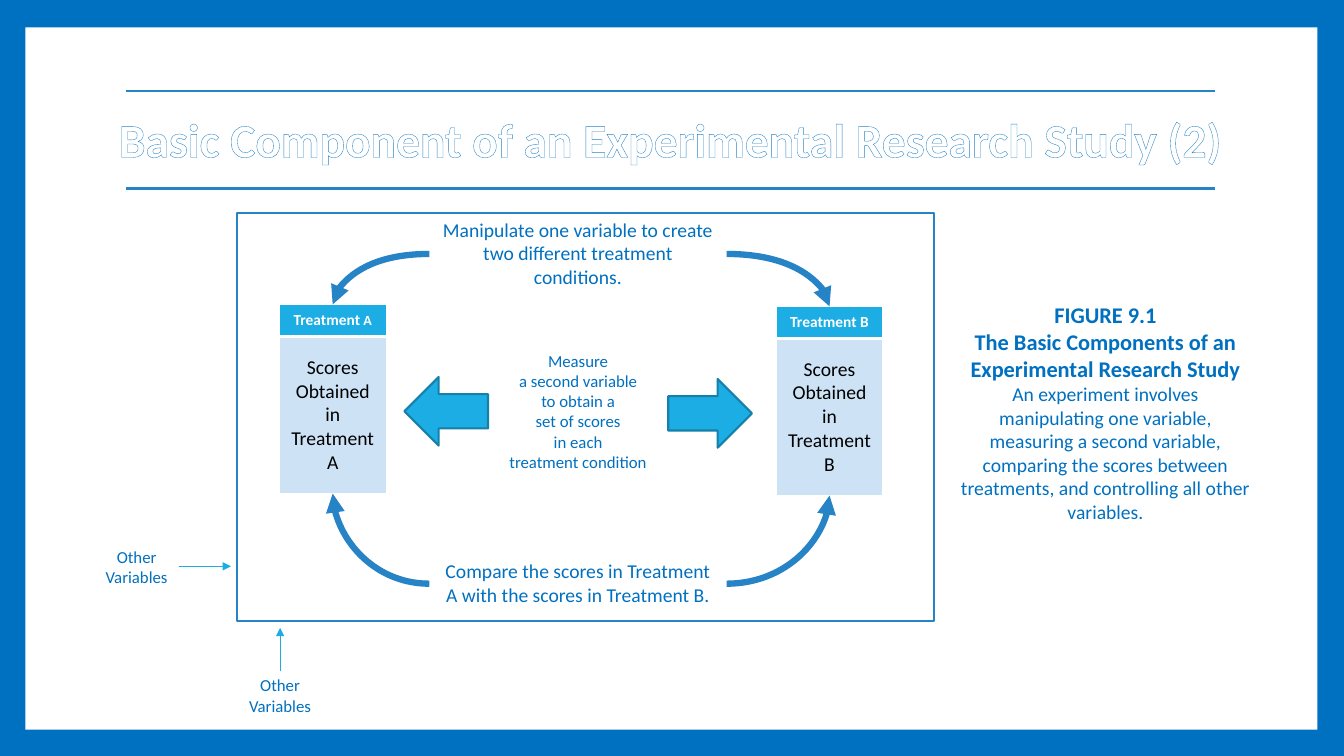
from lxml.etree import SubElement
from pptx import Presentation
from pptx.dml.color import RGBColor
from pptx.enum.shapes import MSO_CONNECTOR, MSO_SHAPE
from pptx.enum.text import MSO_ANCHOR, MSO_AUTO_SIZE, PP_ALIGN
from pptx.oxml import parse_xml
from pptx.oxml.ns import nsdecls, qn
from pptx.util import Cm, Pt

FONT = "Calibri"
COLORS = {
    "blue": "0070C0",
    "line": "2683C6",
    "accent": "1CADE4",
    "accent_dark": "1580A9",
    "pale": "CDE3F5",
    "white": "FFFFFF",
    "black": "000000",
}
TABLE_WIDTH, HEADER_HEIGHT, SCORES_HEIGHT = 2.69, 0.81, 3.96
CURVE_TOP, CURVE_BOTTOM = 6.4, 14.71


def rgb(name):
    return RGBColor.from_string(COLORS[name])


def format_paragraph(p, size, color="blue", bold=False):
    p.alignment = PP_ALIGN.CENTER
    for r in p.runs:
        r.font.name = FONT
        r.font.size = Pt(size)
        r.font.bold = bold
        r.font.color.rgb = rgb(color)


def add_title(s, text):
    title = s.shapes.title
    title.left, title.top, title.width, title.height = Cm(2.39), Cm(1.7), Cm(29.01), Cm(3.76)
    tf = title.text_frame
    tf.text = text
    tf.auto_size = MSO_AUTO_SIZE.NONE
    tf.vertical_anchor = MSO_ANCHOR.MIDDLE
    p = tf.paragraphs[0]
    p.line_spacing = 0.9
    format_paragraph(p, 34, "white", True)
    outline = parse_xml(
        f'<a:ln {nsdecls("a")} w="{Pt(0.52)}"><a:solidFill>'
        f'<a:srgbClr val="{COLORS["line"]}"/></a:solidFill></a:ln>'
    )
    p.runs[0].font._element.insert(0, outline)
    return title


def add_text(s, left, top, width, height, text, size):
    sp = s.shapes.add_textbox(Cm(left), Cm(top), Cm(width), Cm(height))
    tf = sp.text_frame
    tf.word_wrap = True
    tf.auto_size = MSO_AUTO_SIZE.SHAPE_TO_FIT_TEXT
    tf.text = text
    for p in tf.paragraphs:
        format_paragraph(p, size)
    return tf


def add_caption(s):
    tf = add_text(
        s, 23.77, 7.47, 8.05, 5.89,
        "FIGURE 9.1\n"
        "The Basic Components of an Experimental Research Study\n"
        "An experiment involves manipulating one variable, measuring a second variable,\n"
        "comparing the scores between treatments, and controlling all other variables.",
        14,
    )
    for p in tf.paragraphs:
        p._p.get_or_add_pPr().set("marL", str(Cm(0.13)))
    for p in tf.paragraphs[:2]:
        format_paragraph(p, 16, bold=True)


def add_box(s, shape, left, top, width, height, fill=None, line=None):
    sp = s.shapes.add_shape(shape, Cm(left), Cm(top), Cm(width), Cm(height))
    sp.shadow.inherit = False
    if fill:
        sp.fill.solid()
        sp.fill.fore_color.rgb = rgb(fill)
    else:
        sp.fill.background()
    if line:
        sp.line.color.rgb = rgb(line)
        sp.line.width = Pt(1.5)
    else:
        sp.line.fill.background()
    return sp


def add_line(s, start, end, color, width, arrow=False, curved=False):
    kind = MSO_CONNECTOR.CURVE if curved else MSO_CONNECTOR.STRAIGHT
    cxn = s.shapes.add_connector(kind, *map(Cm, start + end))
    cxn.line.color.rgb = rgb(color)
    cxn.line.width = Pt(width)
    spPr = cxn.element.spPr
    if curved:
        spPr.find(qn("a:prstGeom")).set("prst", "curvedConnector2")
    if arrow:
        SubElement(spPr.find(qn("a:ln")), qn("a:tailEnd"), type="triangle")
    SubElement(spPr, qn("a:effectLst"))


def style_cell(cell, fill, bottom, top):
    """Give a cell white borders (bottom and top widths in points) and a fill."""
    tcPr = cell._tc.get_or_add_tcPr()
    for side, width in (("L", 1), ("R", 1), ("T", top), ("B", bottom)):
        ln = SubElement(tcPr, qn(f"a:ln{side}"), w=str(Pt(width)))
        solid = SubElement(ln, qn("a:solidFill"))
        SubElement(solid, qn("a:srgbClr"), val=COLORS["white"])
    cell.fill.solid()
    cell.fill.fore_color.rgb = rgb(fill)


def add_treatment(s, letter, left, top, letter_size, curve_x):
    """Add a treatment's table and the two curved arrows that point to it."""
    height = HEADER_HEIGHT + SCORES_HEIGHT
    table = s.shapes.add_table(2, 1, Cm(left), Cm(top), Cm(TABLE_WIDTH), Cm(height)).table
    table.first_row = table.horz_banding = False
    table.rows[0].height, table.rows[1].height = Cm(HEADER_HEIGHT), Cm(SCORES_HEIGHT)
    header, scores = table.cell(0, 0), table.cell(1, 0)
    style_cell(header, "accent", bottom=3, top=1)
    style_cell(scores, "pale", bottom=1, top=3)

    p = header.text_frame.paragraphs[0]
    p.text = "Treatment"
    r = p.add_run()
    r.text = f" {letter}"
    format_paragraph(p, 11, "white", True)
    r.font.size = Pt(letter_size)

    scores.text_frame.text = f"Scores\nObtained in\nTreatment {letter}"
    for p in scores.text_frame.paragraphs:
        format_paragraph(p, 14, "black")
    for cell in (header, scores):
        cell.vertical_anchor = MSO_ANCHOR.MIDDLE

    middle = left + TABLE_WIDTH / 2
    for curve_y, table_y in ((CURVE_TOP, top), (CURVE_BOTTOM, top + height)):
        add_line(s, (curve_x, curve_y), (middle, table_y), "line", 4.5, arrow=True, curved=True)


def main():
    prs = Presentation()
    prs.slide_width, prs.slide_height = Cm(33.87), Cm(19.05)
    s = prs.slides.add_slide(prs.slide_layouts[5])
    s.background.fill.solid()
    s.background.fill.fore_color.rgb = rgb("blue")

    title = add_title(s, "Basic Component of an Experimental Research Study (2)")
    panel = add_box(s, MSO_SHAPE.RECTANGLE, 0.64, 0.69, 32.56, 17.7, fill="white")
    title.element.addprevious(panel.element)
    for y in (4.75, 2.29):
        add_line(s, (3.18, y), (30.61, y), "line", 1.5)

    add_caption(s)
    add_text(
        s, 11.61, 8.71, 5.92, 3.33,
        "Measure\na second variable\nto obtain a\nset of scores\nin each\ntreatment condition", 12,
    )
    add_text(s, 10.82, 13.97, 7.49, 1.45,
             "Compare the scores in Treatment A with the scores in Treatment B.", 14)
    add_text(s, 10.82, 5.36, 7.49, 2.06,
             "Manipulate one variable to create two different treatment conditions.", 14)

    add_treatment(s, "A", 7.04, 7.67, 10, 10.82)
    add_treatment(s, "B", 19.56, 7.72, 11, 18.31)
    for left, top, rotation in ((10.19, 9.5, 0), (16.84, 9.55, 180)):
        arrow = add_box(s, MSO_SHAPE.LEFT_ARROW, left, top, 2.11, 1.73, "accent", "accent_dark")
        arrow.rotation = rotation
    add_box(s, MSO_SHAPE.RECTANGLE, 5.97, 5.36, 17.58, 10.29, line="line")

    for left, top, width, start, end in (
        (2.39, 13.64, 2.11, (4.5, 14.27), (5.82, 14.27)),
        (5.74, 16.89, 2.64, (7.06, 16.92), (7.06, 15.82)),
    ):
        add_text(s, left, top, width, 1.27, "Other\nVariables", 12)
        add_line(s, start, end, "accent", 0.79, arrow=True)

    prs.save("out.pptx")


if __name__ == "__main__":
    main()
